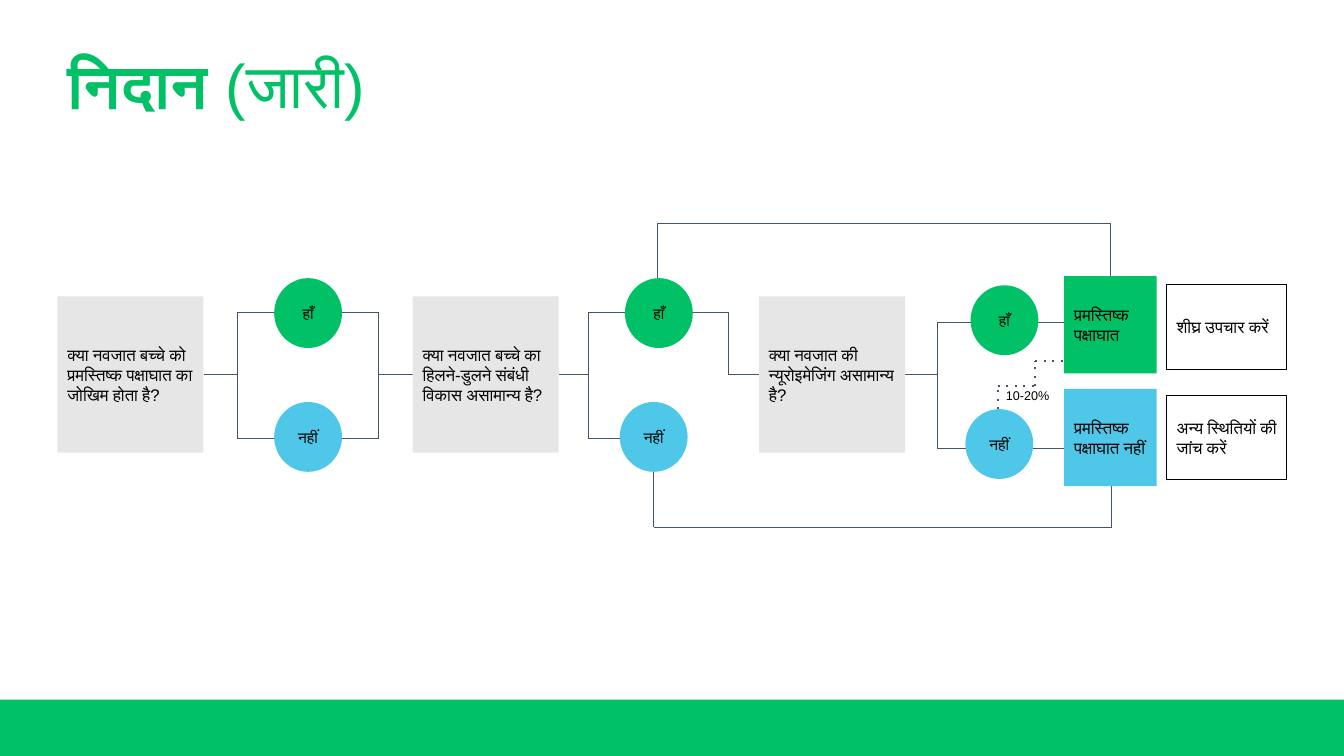
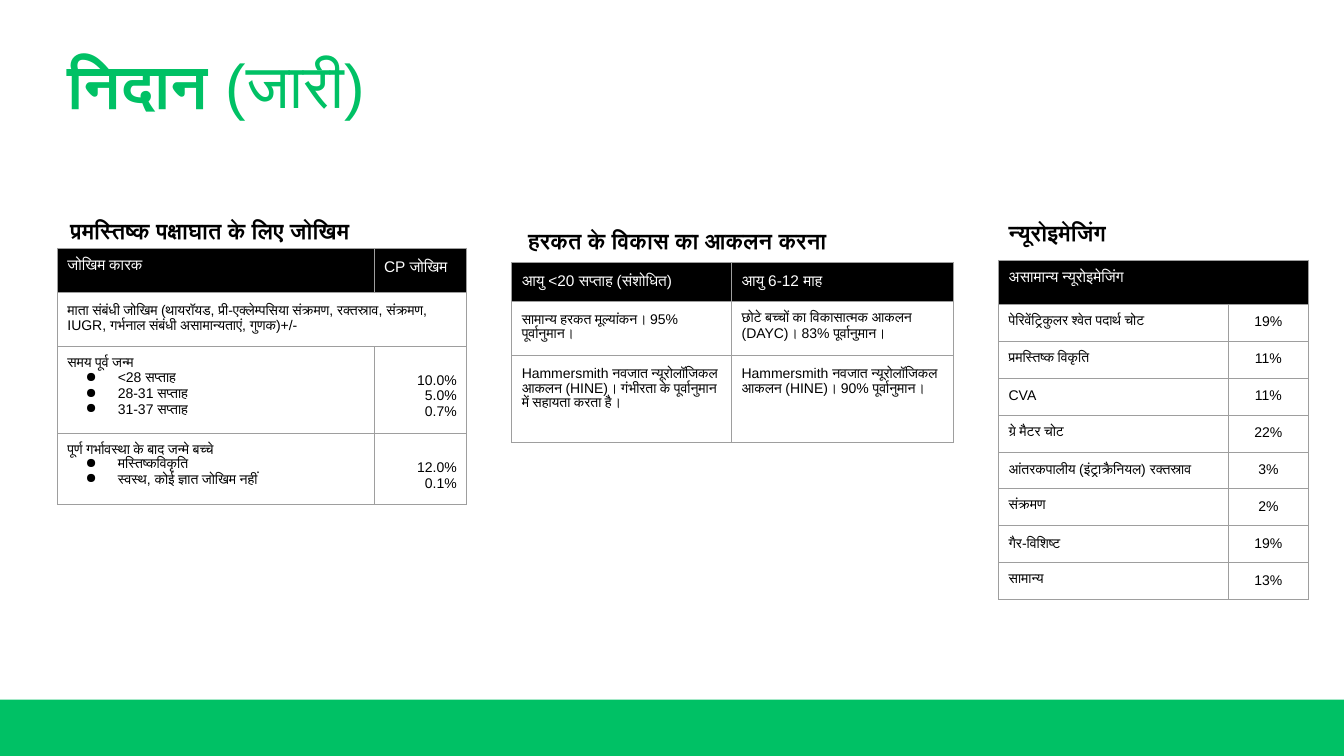
from collections import namedtuple
from dataclasses import dataclass
from itertools import pairwise

from lxml import etree
from pptx import Presentation
from pptx.dml.color import RGBColor
from pptx.enum.shapes import MSO_CONNECTOR, MSO_SHAPE
from pptx.enum.text import MSO_ANCHOR, PP_ALIGN
from pptx.oxml.ns import qn
from pptx.util import Cm, Pt

RECTANGLE, OVAL = MSO_SHAPE.RECTANGLE, MSO_SHAPE.OVAL
STRAIGHT = MSO_CONNECTOR.STRAIGHT
TOP, MIDDLE = MSO_ANCHOR.TOP, MSO_ANCHOR.MIDDLE
LEFT, CENTER, RIGHT = PP_ALIGN.LEFT, PP_ALIGN.CENTER, PP_ALIGN.RIGHT
BLANK_LAYOUT = 6

# A table cell of several lines: a heading with bullets, or values that skip the heading line.
Entry = namedtuple("Entry", "heading items")


@dataclass(frozen=True)
class Theme:
    font: str = "Arial"
    green: str = "00C165"
    blue: str = "4FC7E8"
    grey: str = "E7E6E6"
    black: str = "000000"
    white: str = "FFFFFF"
    route: str = "44546A"
    grid: str = "9E9E9E"
    title_size: int = 44
    heading_size: int = 16
    box_size: int = 12
    answer_size: int = 11
    header_size: int = 11
    cell_size: int = 10
    label_size: int = 9
    thin: float = 0.75
    thick: float = 1.5
    inset: float = 0.25
    inset_tight: float = 0.13
    cell_line: float = 0.41


class SlideBuilder:
    def __init__(self, theme):
        self.theme = theme
        self.deck = Presentation()
        self.deck.slide_width, self.deck.slide_height = Cm(33.87), Cm(19.05)
        self.page = None

    def new_page(self, strong, light):
        """Start a page with the bottom band and a title in two weights."""
        theme = self.theme
        self.page = self.deck.slides.add_slide(self.deck.slide_layouts[BLANK_LAYOUT])
        self.shape(RECTANGLE, 0, 17.63, 33.87, 1.42, theme.green)
        paragraph = self.text(1.45, 1.27, 13.89, 1.98, strong, theme.title_size, theme.green)
        paragraph.line_spacing = 0.9
        paragraph.runs[0].font.bold = True
        span = paragraph.add_run()
        span.text = light
        span.font.bold = False

    def style(self, paragraph, size, color, align=LEFT, bold=None):
        paragraph.alignment = align
        font = paragraph.font
        font.name, font.size, font.bold = self.theme.font, Pt(size), bold
        font.color.rgb = RGBColor.from_string(color)

    def fill_frame(self, frame, text, size, color, align, anchor, inset_y, bold=None):
        frame.word_wrap = True
        frame.vertical_anchor = anchor
        frame.margin_left = frame.margin_right = Cm(self.theme.inset)
        frame.margin_top = frame.margin_bottom = Cm(inset_y)
        paragraph = frame.paragraphs[0]
        paragraph.add_run().text = text
        self.style(paragraph, size, color, align, bold)
        return paragraph

    def text(self, left, top, width, height, text, size, color, anchor=TOP, bold=None):
        box = self.page.shapes.add_textbox(Cm(left), Cm(top), Cm(width), Cm(height))
        return self.fill_frame(box.text_frame, text, size, color, LEFT, anchor,
                               self.theme.inset_tight, bold)

    def heading(self, left, top, width, text):
        self.text(left, top, width, 0.94, text, self.theme.heading_size,
                  self.theme.black, bold=True)

    def shape(self, kind, left, top, width, height, fill, text=None,
              size=None, align=LEFT, outline=None):
        shape = self.page.shapes.add_shape(kind, Cm(left), Cm(top), Cm(width), Cm(height))
        shape.shadow.inherit = False
        shape.fill.solid()
        shape.fill.fore_color.rgb = RGBColor.from_string(fill)
        if outline:
            shape.line.color.rgb = RGBColor.from_string(outline)
            shape.line.width = Pt(self.theme.thin)
        else:
            shape.line.fill.background()
        if text:
            self.fill_frame(shape.text_frame, text, size or self.theme.box_size,
                            self.theme.black, align, MIDDLE, self.theme.inset)

    def answer(self, left, top, text, fill):
        self.shape(OVAL, left, top, 1.71, 1.76, fill, text, self.theme.answer_size, CENTER)

    def route(self, *points, dotted=False):
        """Join the points with straight lines."""
        for (x1, y1), (x2, y2) in pairwise(points):
            line = self.page.shapes.add_connector(STRAIGHT, Cm(x1), Cm(y1), Cm(x2), Cm(y2))
            line.line.color.rgb = RGBColor.from_string(self.theme.route)
            line.line.width = Pt(self.theme.thick if dotted else self.theme.thin)
            properties = line.element.spPr
            if dotted:
                etree.SubElement(properties.find(qn("a:ln")), qn("a:prstDash"), val="dot")
            etree.SubElement(properties, qn("a:effectLst"))

    def bullet(self, paragraph):
        properties = paragraph._p.get_or_add_pPr()
        properties.set("marL", str(Cm(1.27)))
        properties.set("indent", str(-Cm(0.81)))
        color = etree.SubElement(properties, qn("a:buClr"))
        etree.SubElement(color, qn("a:srgbClr"), val=self.theme.black)
        etree.SubElement(properties, qn("a:buChar"), char="●")

    def cell_borders(self, cell):
        properties = cell._tc.get_or_add_tcPr()
        for side in ("a:lnL", "a:lnR", "a:lnT", "a:lnB"):
            border = etree.SubElement(properties, qn(side), w=str(Pt(self.theme.thin)))
            fill = etree.SubElement(border, qn("a:solidFill"))
            etree.SubElement(fill, qn("a:srgbClr"), val=self.theme.grid)

    def cell(self, cell, content, is_header, align):
        theme = self.theme
        cell.margin_left = cell.margin_right = Cm(theme.inset)
        cell.margin_top = cell.margin_bottom = Cm(theme.inset)
        self.cell_borders(cell)
        if is_header:
            cell.fill.solid()
            cell.fill.fore_color.rgb = RGBColor.from_string(theme.black)
        else:
            cell.fill.background()
        if content is None:
            return
        entry = content if isinstance(content, Entry) else Entry(content, [])
        if not entry.heading:
            cell.margin_top = Cm(theme.inset + theme.cell_line)
        lines = [entry.heading, *entry.items] if entry.heading else entry.items
        frame = cell.text_frame
        for index, line in enumerate(lines):
            paragraph = frame.add_paragraph() if index else frame.paragraphs[0]
            paragraph.add_run().text = line
            if entry.heading and index:
                self.bullet(paragraph)
            self.style(paragraph, theme.header_size if is_header else theme.cell_size,
                       theme.white if is_header else theme.black, align)

    def table(self, left, top, widths, heights, rows, value_align=LEFT):
        """Draw rows under a header row; None joins a cell to the one on its left."""
        table = self.page.shapes.add_table(len(rows), len(widths), Cm(left), Cm(top),
                                           Cm(sum(widths)), Cm(sum(heights))).table
        table.first_row = table.horz_banding = False
        for column, width in zip(table.columns, widths):
            column.width = Cm(width)
        for row, height in zip(table.rows, heights):
            row.height = Cm(height)
        for y, contents in enumerate(rows):
            for x, content in enumerate(contents):
                align = value_align if x and y else LEFT
                self.cell(table.cell(y, x), content, y == 0, align)
                if content is None:
                    table.cell(y, x - 1).merge(table.cell(y, x))


def diagnosis_flow(slides):
    theme = slides.theme
    slides.new_page("निदान ", "(जारी)")
    middle, yes_y, no_y = 9.44, 7.87, 11.05
    imaging_yes_y, imaging_no_y = 8.13, 11.3
    result_x = 26.82

    slides.route((5.13, middle), (5.99, middle))
    slides.route((5.99, yes_y), (9.53, yes_y), (9.53, no_y), (5.99, no_y), (5.99, yes_y))
    slides.route((9.53, middle), (10.4, middle))
    slides.route((14.08, middle), (14.83, middle))
    slides.route((16.48, no_y), (14.83, no_y), (14.83, yes_y), (18.36, yes_y),
                 (18.36, middle), (19.13, middle))
    slides.route((22.81, middle), (23.62, middle))
    slides.route((result_x, imaging_yes_y), (23.62, imaging_yes_y),
                 (23.62, imaging_no_y), (result_x, imaging_no_y))
    slides.route((16.58, 7.01), (16.58, 5.63), (27.99, 5.63), (27.99, 6.96))
    slides.route((16.48, 11.89), (16.48, 13.28), (28.02, 13.28), (28.02, 12.25))
    slides.route((25.15, 10.31), (25.15, 9.73), (26.09, 9.73), (26.09, 9.09),
                 (result_x, 9.09), dotted=True)

    questions = [
        (1.45, "क्या नवजात बच्चे को प्रमस्तिष्क पक्षाघात का जोखिम होता है?"),
        (10.4, "क्या नवजात बच्चे का हिलने-डुलने संबंधी विकास असामान्य है?"),
        (19.13, "क्या नवजात की न्यूरोइमेजिंग असामान्य है?"),
    ]
    for left, question in questions:
        slides.shape(RECTANGLE, left, 7.47, 3.68, 3.94, theme.grey, question)

    for yes_left, no_left, top in [(6.91, 6.91, 7.01), (15.75, 15.62, 7.01), (24.46, 24.33, 7.19)]:
        slides.answer(yes_left, top, "हाँ", theme.green)
        slides.answer(no_left, top + 3.12, "नहीं", theme.blue)

    outcomes = [
        (6.96, theme.green, "प्रमस्तिष्क पक्षाघात", 7.18, "शीघ्र उपचार करें"),
        (9.8, theme.blue, "प्रमस्तिष्क पक्षाघात नहीं", 9.96, "अन्य स्थितियों की जांच करें"),
    ]
    for result_top, color, result, action_top, action in outcomes:
        slides.shape(RECTANGLE, result_x, result_top, 2.33, 2.45, color, result)
        slides.shape(RECTANGLE, 29.4, action_top, 3.03, 2.13, theme.white, action,
                     outline=theme.black)
    slides.text(25.1, 9.68, 2.31, 0.58, "10-20%", theme.label_size, theme.black, MIDDLE)


def risk_tables(slides):
    slides.new_page("निदान ", "(जारी)")

    slides.heading(1.52, 5.33, 10.13, "प्रमस्तिष्क पक्षाघात के लिए जोखिम")
    slides.table(1.45, 6.26, [7.98, 2.33], [1.11, 1.36, 2.2, 1.79], [
        ["जोखिम कारक", "CP जोखिम"],
        ["माता संबंधी जोखिम (थायरॉयड, प्री-एक्लेम्पसिया संक्रमण, रक्तस्राव, संक्रमण, "
         "IUGR, गर्भनाल संबंधी असामान्यताएं, गुणक)+/-", None],
        [Entry("समय पूर्व जन्म", ["<28 सप्ताह", "28-31 सप्ताह", "31-37 सप्ताह"]),
         Entry("", ["10.0%", "5.0%", "0.7%"])],
        [Entry("पूर्ण गर्भावस्था के बाद जन्मे बच्चे",
               ["मस्तिष्कविकृति", "स्वस्थ, कोई ज्ञात जोखिम नहीं"]),
         Entry("", ["12.0%", "0.1%"])],
    ], RIGHT)

    slides.heading(13.06, 5.59, 9.22, "हरकत के विकास का आकलन करना")
    slides.table(12.9, 6.62, [5.54, 5.59], [0.98, 1.36, 2.2], [
        ["आयु <20 सप्ताह (संशोधित)", "आयु 6-12 माह"],
        ["सामान्य हरकत मूल्यांकन। 95% पूर्वानुमान।",
         "छोटे बच्चों का विकासात्मक आकलन (DAYC)। 83% पूर्वानुमान।"],
        ["Hammersmith नवजात न्यूरोलॉजिकल आकलन (HINE)। गंभीरता के पूर्वानुमान में सहायता करता है।",
         "Hammersmith नवजात न्यूरोलॉजिकल आकलन (HINE)। 90% पूर्वानुमान।"],
    ])

    findings = [
        ["पेरिवेंट्रिकुलर श्वेत पदार्थ चोट", "19%"],
        ["प्रमस्तिष्क विकृति", "11%"],
        ["CVA", "11%"],
        ["ग्रे मैटर चोट", "22%"],
        ["आंतरकपालीय (इंट्राक्रैनियल) रक्तस्राव", "3%"],
        ["संक्रमण", "2%"],
        ["गैर-विशिष्ट", "19%"],
        ["सामान्य", "13%"],
    ]
    slides.heading(25.17, 5.38, 6.76, "न्यूरोइमेजिंग")
    slides.table(25.17, 6.56, [5.79, 2.01], [1.11] + [0.93] * len(findings),
                 [["असामान्य न्यूरोइमेजिंग", None], *findings], CENTER)


def main():
    slides = SlideBuilder(Theme())
    diagnosis_flow(slides)
    risk_tables(slides)
    slides.deck.save("out.pptx")


if __name__ == "__main__":
    main()
